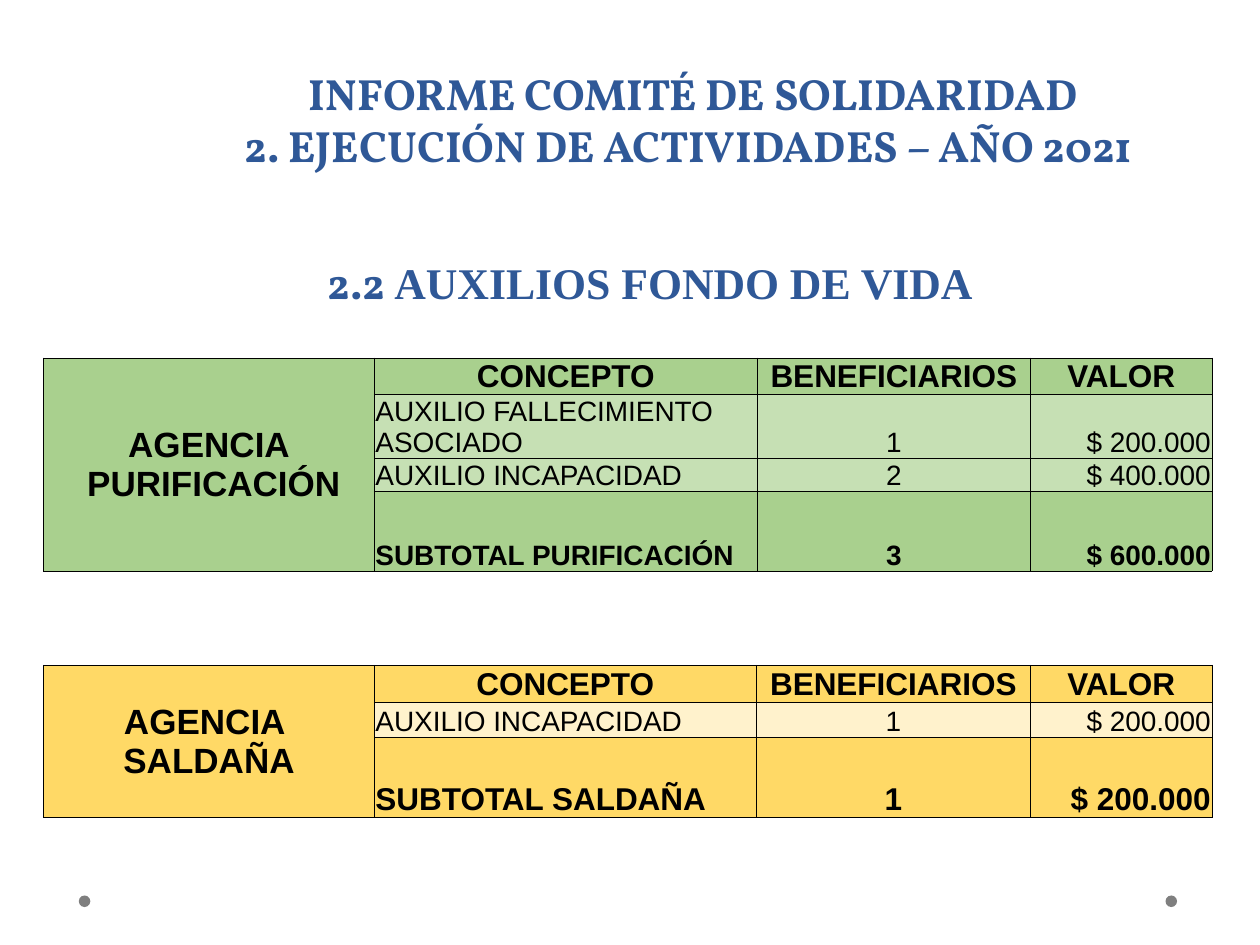
from dataclasses import dataclass
from lxml.etree import SubElement as Sub
from pptx import Presentation
from pptx.dml.color import RGBColor as RGB
from pptx.enum.shapes import MSO_SHAPE as Shape
from pptx.enum.text import MSO_ANCHOR as Anchor, PP_ALIGN as Align
from pptx.oxml.ns import qn
from pptx.util import Pt


@dataclass
class Theme:
    blue: str = "2F5897"
    black: str = "000000"
    gray: str = "7F7F7F"
    head: str = "Vollkorn"
    serif: str = "Times New Roman"
    sans: str = "Arial"
    title: int = 25
    agency: int = 20
    label: int = 18
    body: int = 16


theme = Theme()


def style(run, face, size, color, bold=True):
    font = run.font
    font.name, font.size, font.bold = face, Pt(size), bold
    font.color.rgb = RGB.from_string(color)


def edge(cell):
    props = cell._tc.get_or_add_tcPr()
    for i, side in enumerate(("lnL", "lnR", "lnT", "lnB")):
        line = props.makeelement(qn(f"a:{side}"), {"w": str(Pt(0.5))})
        fill = Sub(line, qn("a:solidFill"))
        Sub(fill, qn("a:srgbClr"), val=theme.black)
        props.insert(i, line)


deck = Presentation()
deck.slide_width, deck.slide_height = Pt(720), Pt(540)
slide = deck.slides.add_slide(deck.slide_layouts[5])

for left in (666, 45):
    dot = slide.shapes.add_shape(Shape.OVAL, Pt(left), Pt(511.7), Pt(6.6), Pt(6.6))
    dot.shadow.inherit = False
    dot.fill.solid()
    dot.fill.fore_color.rgb = RGB.from_string(theme.gray)
    dot.line.fill.background()

title = slide.shapes.title
title.left, title.top, title.width, title.height = Pt(72), Pt(54.7), Pt(648), Pt(43.2)
frame = title.text_frame
frame.word_wrap = True
frame.vertical_anchor = Anchor.BOTTOM
frame.margin_top = frame.margin_bottom = 0
para = frame.paragraphs[0]
para.text = "INFORME COMITÉ DE SOLIDARIDAD\v2. EJECUCIÓN DE ACTIVIDADES – AÑO 2021 "
para.alignment = Align.CENTER
para.line_spacing = Pt(29.7)
for run in para.runs:
    style(run, theme.head, theme.title, theme.blue)

header = ("CONCEPTO", "BENEFICIARIOS", "VALOR")
tables = [
    (204.6, (188.9, 218.9, 156.1, 103.7), (20.6, 36.6, 18.3, 45.7),
     "AGENCIA\n PURIFICACIÓN", "A9D08E", "C6E0B4", theme.body, [
         header,
         ("AUXILIO FALLECIMIENTO ASOCIADO", "1", "$ 200.000"),
         ("AUXILIO INCAPACIDAD", "2", "$ 400.000"),
         ("SUBTOTAL PURIFICACIÓN", "3", "$ 600.000")]),
    (380.2, (188.9, 218.3, 156.7, 103.7), (21.1, 20, 45.7),
     "AGENCIA \nSALDAÑA", "FFD966", "FFF2CC", theme.label, [
         header,
         ("AUXILIO INCAPACIDAD", "1", "$ 200.000"),
         ("SUBTOTAL SALDAÑA", "1", "$ 200.000")]),
]
sides = (Align.CENTER, Align.LEFT, Align.CENTER, Align.RIGHT)

for top, wide, high, name, dark, pale, total, data in tables:
    last = len(data) - 1
    grid = slide.shapes.add_table(
        len(data), 4, Pt(25), Pt(top), Pt(sum(wide)), Pt(sum(high))).table
    grid.first_row = grid.horz_banding = False
    for col, width in zip(grid.columns, wide):
        col.width = Pt(width)
    for row, height in zip(grid.rows, high):
        row.height = Pt(height)
    grid.cell(0, 0).merge(grid.cell(last, 0))
    for r, line in enumerate(data):
        for c, text in enumerate((name if r == 0 else "", *line)):
            cell = grid.cell(r, c)
            strong = c == 0 or r in (0, last)
            cell.fill.solid()
            cell.fill.fore_color.rgb = RGB.from_string(dark if strong else pale)
            cell.margin_left = cell.margin_right = cell.margin_top = Pt(0.7)
            cell.margin_bottom = 0
            cell.vertical_anchor = Anchor.BOTTOM if c else Anchor.MIDDLE
            edge(cell)
            cell.text_frame.text = text
            size = theme.label if r == 0 else total if r == last else theme.body
            for para in cell.text_frame.paragraphs:
                para.alignment = sides[c] if r else Align.CENTER
                for run in para.runs:
                    style(run, theme.sans, size if c else theme.agency, theme.black, strong)

box = slide.shapes.add_textbox(Pt(42.5), Pt(151.2), Pt(658), Pt(19.4))
frame = box.text_frame
frame.word_wrap = True
frame.vertical_anchor = Anchor.MIDDLE
para = frame.paragraphs[0]
para.alignment = Align.CENTER
for text, face in (("2.2 ", theme.head), ("AUXILIOS FONDO DE VIDA", theme.serif)):
    run = para.add_run()
    run.text = text
    style(run, face, theme.title, theme.blue)

deck.save("out.pptx")
